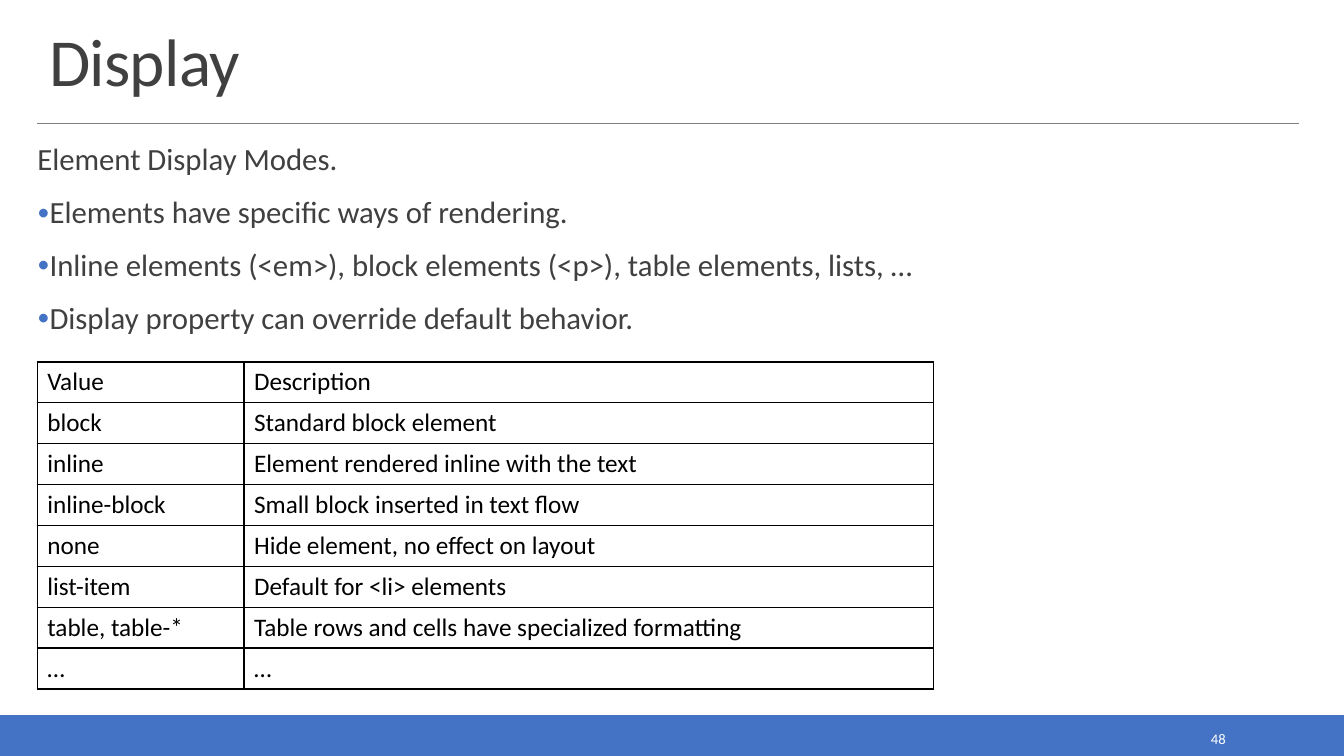
from dataclasses import dataclass

from lxml.etree import SubElement
from pptx import Presentation
from pptx.dml.color import RGBColor
from pptx.enum.shapes import MSO_CONNECTOR as Connector, MSO_SHAPE as Shape
from pptx.enum.text import MSO_ANCHOR as Anchor, PP_ALIGN as Align
from pptx.oxml.ns import qn
from pptx.util import Cm, Pt


@dataclass(frozen=True)
class Theme:
    font: str = "Calibri"
    accent: str = "4472C4"
    rule: str = "808080"
    text: str = "404040"
    table: str = "000000"
    light: str = "FFFFFF"
    title_size: float = 48
    body_size: float = 22
    table_size: float = 18
    number_size: float = 10.5


THEME = Theme()
SLIDE_WIDTH, SLIDE_HEIGHT = Cm(33.87), Cm(19.05)
MARGIN, CONTENT_WIDTH = Cm(0.94), Cm(31.8)

INTRO = "Element Display Modes."
POINTS = [
    "Elements have specific ways of rendering.",
    "Inline elements (<em>), block elements (<p>), table elements, lists, …",
    "Display property can override default behavior.",
]
DISPLAY_VALUES = [
    ("Value", "Description"),
    ("block", "Standard block element"),
    ("inline", "Element rendered inline with the text"),
    ("inline-block", "Small block inserted in text flow"),
    ("none", "Hide element, no effect on layout"),
    ("list-item", "Default for <li> elements"),
    ("table, table-*", "Table rows and cells have specialized formatting"),
    ("…", "…"),
]


def style_font(para, size, color):
    para.font.name = THEME.font
    para.font.size = Pt(size)
    para.font.color.rgb = RGBColor.from_string(color)


def add_text_box(page, left, top, width, height, anchor=Anchor.TOP):
    frame = page.shapes.add_textbox(left, top, width, height).text_frame
    frame.word_wrap = True
    frame.vertical_anchor = anchor
    return frame


def add_footer_band(page):
    top = Cm(18.03)
    band = page.shapes.add_shape(Shape.RECTANGLE, 0, top, SLIDE_WIDTH, SLIDE_HEIGHT - top)
    band.shadow.inherit = False
    band.fill.solid()
    band.fill.fore_color.rgb = RGBColor.from_string(THEME.accent)
    band.line.color.rgb = RGBColor.from_string(THEME.accent)
    band.line.width = Pt(1.25)


def add_rule(page, top):
    rule = page.shapes.add_connector(
        Connector.STRAIGHT, MARGIN, top, MARGIN + CONTENT_WIDTH, top)
    rule.line.color.rgb = RGBColor.from_string(THEME.rule)
    rule.line.width = Pt(0.5)
    SubElement(rule._element.spPr, qn("a:effectLst"))


def add_title(page, text):
    frame = add_text_box(page, Cm(0.99), Cm(0.51), CONTENT_WIDTH, Cm(2.13), Anchor.BOTTOM)
    para = frame.paragraphs[0]
    para.text = text
    para.line_spacing = 0.85
    style_font(para, THEME.title_size, THEME.text)
    para._p.pPr.find(qn("a:defRPr")).set("spc", "-50")


def add_bullet(para):
    props = para._p.get_or_add_pPr()
    props.set("marL", str(Cm(0.25)))
    props.set("indent", str(-Cm(0.25)))
    color = SubElement(props, qn("a:buClr"))
    SubElement(color, qn("a:srgbClr"), val=THEME.accent)
    SubElement(props, qn("a:buSzPct"), val="80000")
    SubElement(props, qn("a:buFont"), typeface=THEME.font)
    SubElement(props, qn("a:buChar"), char="•")


def add_body(page, intro, points):
    frame = add_text_box(page, MARGIN, Cm(3.53), CONTENT_WIDTH, Cm(5.41))
    frame.margin_left = frame.margin_right = 0
    frame.margin_top = frame.margin_bottom = Cm(0.1)
    for index, text in enumerate([intro, *points]):
        para = frame.add_paragraph() if index else frame.paragraphs[0]
        para.text = text
        para.line_spacing = 0.9
        para.space_before, para.space_after = Pt(12), Pt(2)
        if index:
            add_bullet(para)
        style_font(para, THEME.body_size, THEME.text)


def add_page_number(page, number):
    frame = add_text_box(page, Cm(27.51), Cm(18.26), Cm(3.63), Cm(0.71), Anchor.MIDDLE)
    para = frame.paragraphs[0]
    para.text = number
    para.alignment = Align.RIGHT
    style_font(para, THEME.number_size, THEME.light)


def add_borders(cell):
    props = cell._tc.get_or_add_tcPr()
    for side in ("lnL", "lnR", "lnT", "lnB"):
        line = SubElement(props, qn(f"a:{side}"), w=str(Pt(1)))
        fill = SubElement(line, qn("a:solidFill"))
        SubElement(fill, qn("a:srgbClr"), val=THEME.table)


def add_value_table(page, rows):
    widths, row_height = (Cm(5.21), Cm(17.37)), Cm(1.03)
    table = page.shapes.add_table(
        len(rows), len(widths), MARGIN, Cm(9.12), sum(widths), row_height * len(rows)).table
    table.first_row = table.horz_banding = False
    for column, width in zip(table.columns, widths):
        column.width = width
    for row, texts in zip(table.rows, rows):
        row.height = row_height
        for cell, text in zip(row.cells, texts):
            cell.text = text
            add_borders(cell)
            cell.fill.background()
            style_font(cell.text_frame.paragraphs[0], THEME.table_size, THEME.table)


def main():
    deck = Presentation()
    deck.slide_width, deck.slide_height = SLIDE_WIDTH, SLIDE_HEIGHT
    page = deck.slides.add_slide(deck.slide_layouts[6])

    # Frame of the page
    add_footer_band(page)
    add_rule(page, Cm(3.12))

    # Content
    add_title(page, "Display")
    add_body(page, INTRO, POINTS)
    add_page_number(page, "48")
    add_value_table(page, DISPLAY_VALUES)

    deck.save("out.pptx")


if __name__ == "__main__":
    main()
